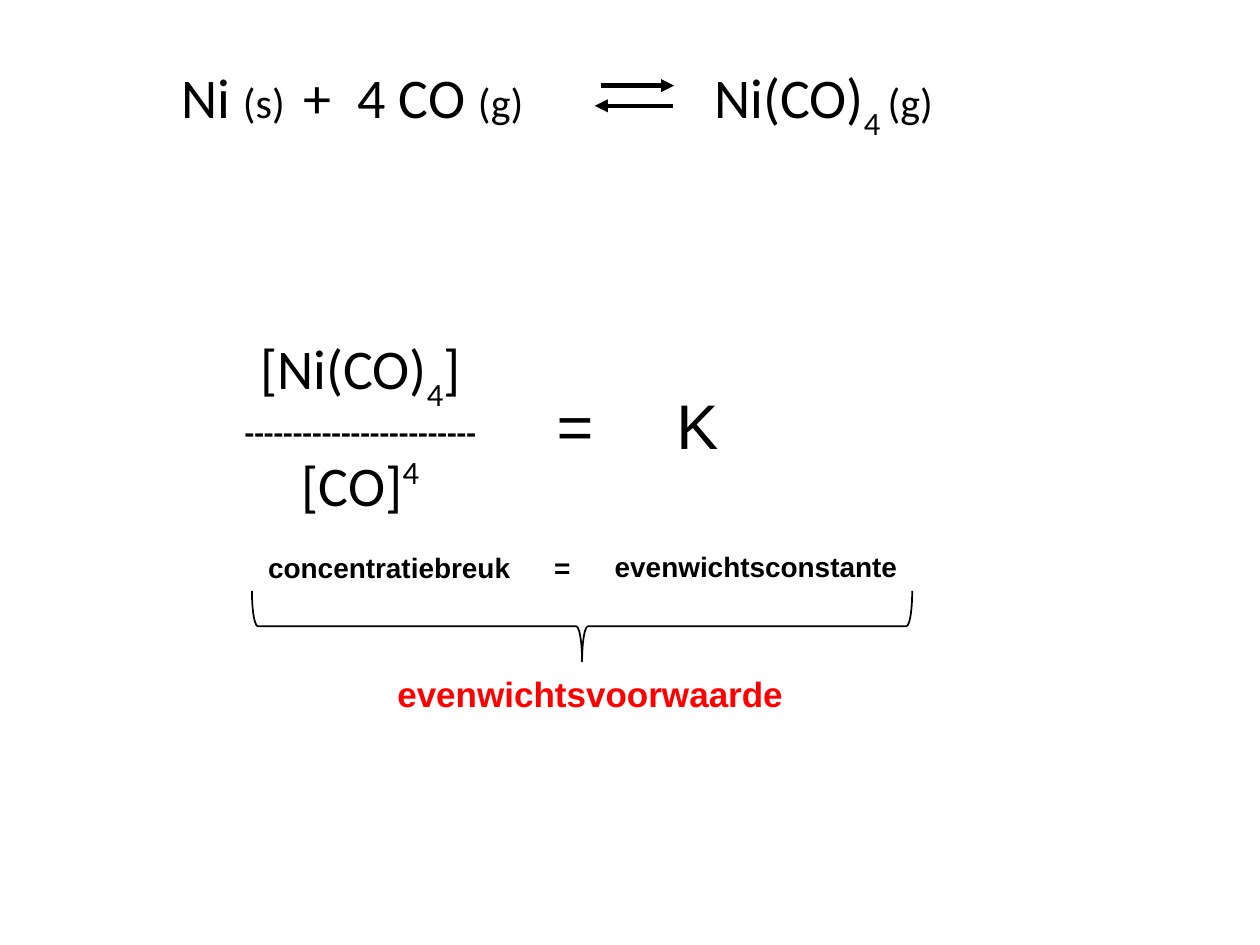
from dataclasses import dataclass

from lxml import etree
from pptx import Presentation
from pptx.dml.color import RGBColor
from pptx.enum import shapes, text
from pptx.oxml import ns
from pptx.util import Inches, Pt


@dataclass(frozen=True)
class Theme:
    """Colours, fonts and type sizes of the slide."""
    ink: RGBColor = RGBColor(0, 0, 0)
    red: RGBColor = RGBColor(255, 0, 0)
    math: str = "Calibri"
    plain: str = "Arial"
    big: int = 36
    term: int = 32
    state: int = 24
    key: int = 20
    rule: int = 18
    note: int = 16


T = Theme()
LEFT, MID = text.PP_ALIGN.LEFT, text.PP_ALIGN.CENTER


def label(slide, box, lines, face, size, color=T.ink, bold=False, align=LEFT, tabs=()):
    """Write lines of (words, size, baseline) runs into a text box."""
    frame = slide.shapes.add_textbox(*map(Inches, box)).text_frame
    frame.word_wrap = True
    for i, runs in enumerate(lines):
        para = frame.paragraphs[0] if i == 0 else frame.add_paragraph()
        para.alignment = align
        if tabs:
            stops = etree.SubElement(para._p.get_or_add_pPr(), ns.qn("a:tabLst"))
            for stop in tabs:
                etree.SubElement(stops, ns.qn("a:tab"), pos=str(Inches(stop)), algn="l")
        font = para.font
        font.name, font.size, font.bold = face, Pt(size), bold
        font.color.rgb = color
        for words, points, base in runs:
            run = para.add_run()
            run.text = words
            if points != size:
                run.font.size = Pt(points)
            if base:
                run.font._element.set("baseline", str(base * 1000))
            if points == T.rule:
                run.font.bold = True


def arrow(slide, start, end, y):
    """Draw a level arrow from start to end."""
    line = slide.shapes.add_connector(
        shapes.MSO_CONNECTOR.STRAIGHT, *map(Inches, (start, y, end, y)))
    line.line.color.rgb, line.line.width = T.ink, Pt(2.5)
    etree.SubElement(line.line._get_or_add_ln(), ns.qn("a:tailEnd"), type="triangle")
    etree.SubElement(line._element.spPr, ns.qn("a:effectLst"))


def reaction(slide, x, y, w, h):
    """Place the reaction equation with its pair of arrows."""
    runs = [("Ni ", T.term, 0), ("(s)", T.state, 0), ("\t+\t4 CO ", T.term, 0),
            ("(g)", T.state, 0), ("\tNi(CO)", T.term, 0), ("4 ", T.term, -30),
            ("(g)", T.state, 0)]
    label(slide, (x, y, w, h), [runs], T.math, T.term, tabs=(0.97, 1.4, 4.23))
    arrow(slide, x + 3.43, x + 4.01, y + 0.23)
    arrow(slide, x + 4, x + 3.38, y + 0.39)


def balance(slide, x, y, w, h):
    """Place the concentration fraction and its constant."""
    lines = [[("[Ni(CO)", T.term, 0), ("4", T.term, -30), ("]", T.term, 0)],
             [("-" * 24, T.rule, 0)],
             [("[CO]", T.term, 0), ("4", T.term, 40)]]
    label(slide, (x, y, 2.68, h), lines, T.math, T.term, align=MID)
    label(slide, (x + 2.8, y + 0.42, w - 2.8, 0.71), [[("=\tK", T.big, 0)]],
          T.plain, T.big, tabs=(0.95,))


def summary(slide, x, y, w, h):
    """Place the named terms, the brace below them and its label."""
    label(slide, (x + 0.03, y + 0.01, 2.83, 0.37),
          [[("concentratiebreuk\t=", T.note, 0)]], T.plain, T.note, bold=True, tabs=(2.27,))
    label(slide, (x + 2.78, y, 2.85, 0.37), [[("evenwichtsconstante", T.note, 0)]],
          T.plain, T.note, bold=True)
    deep = 0.56
    brace = slide.shapes.add_shape(
        shapes.MSO_SHAPE.LEFT_BRACE, Inches(x + (w - deep) / 2),
        Inches(y + 0.66 - w / 2), Inches(deep), Inches(w))
    brace.rotation = 270
    brace.shadow.inherit = False
    brace.fill.background()
    brace.line.color.rgb, brace.line.width = T.ink, Pt(1)
    label(slide, (x + 1, y + h - 0.44, 3.37, 0.44), [[("evenwichtsvoorwaarde", T.key, 0)]],
          T.plain, T.key, T.red, True, MID)


def main():
    """Build and save the slide."""
    deck = Presentation()
    deck.slide_width, deck.slide_height = Inches(10), Inches(7.5)
    slide = deck.slides.add_slide(deck.slide_layouts[6])
    reaction(slide, 1.34, 0.45, 6.97, 0.64)
    balance(slide, 1.52, 2.6, 4.35, 1.48)
    summary(slide, 2, 4.31, 5.24, 1.42)
    deck.save("out.pptx")


if __name__ == "__main__":
    main()
